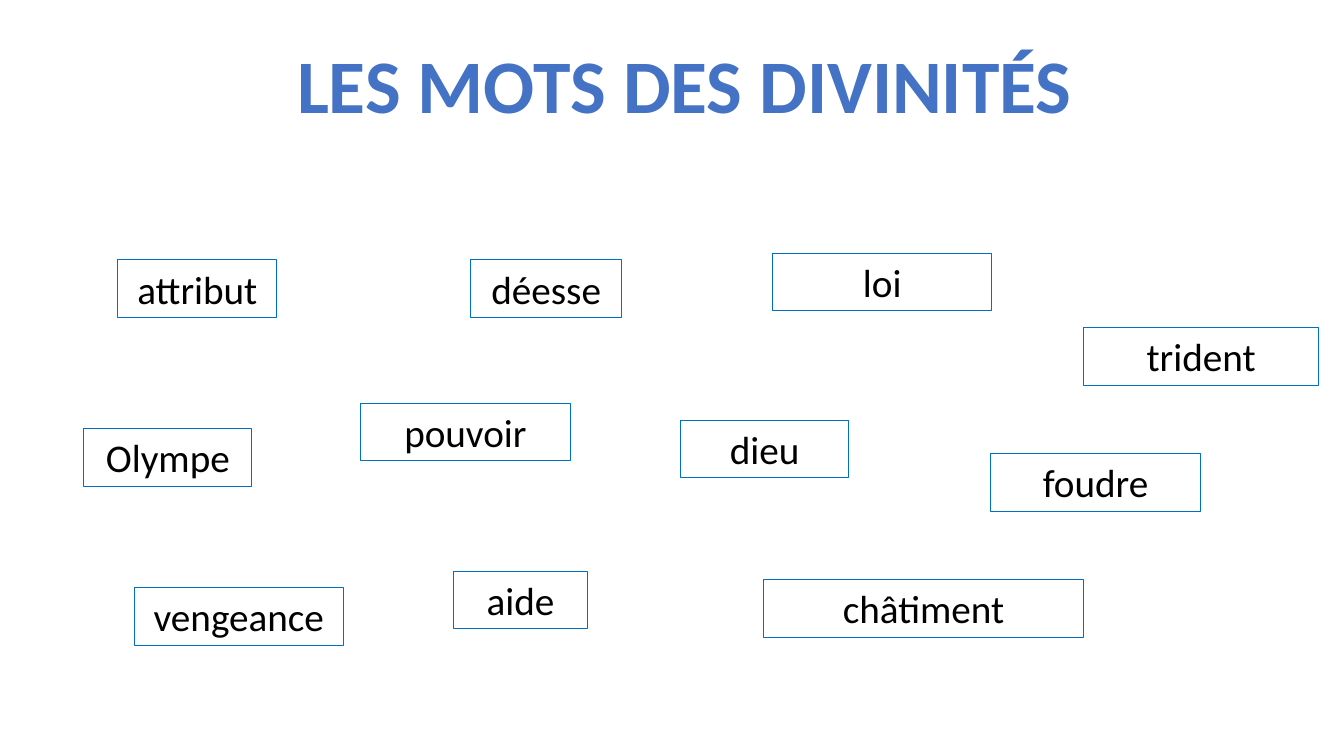
import pptx
import pptx.dml.color
import pptx.enum.shapes
import pptx.enum.text
import pptx.util
from pptx.util import Cm

TITLE = "LES MOTS DES DIVINITÉS"
TITLE_BOX = (3.18, 0.84, 28.14, 2.57)

# Word, left, top and width in centimetres
WORDS = [
    ("attribut", 2.97, 6.55, 4.01),
    ("déesse", 11.86, 6.55, 3.81),
    ("loi", 19.48, 6.38, 5.51),
    ("trident", 27.31, 8.26, 5.92),
    ("Olympe", 2.11, 10.8, 4.24),
    ("pouvoir", 9.09, 10.16, 5.28),
    ("dieu", 17.15, 10.59, 4.24),
    ("foudre", 24.97, 11.43, 5.28),
    ("vengeance", 3.38, 14.81, 5.28),
    ("aide", 11.43, 14.4, 3.38),
    ("châtiment", 19.25, 14.61, 8.05),
]
WORD_HEIGHT = 1.45


def color(value):
    return pptx.dml.color.RGBColor.from_string(value)


def write(shape, text, size, text_color, bold=False):
    frame = shape.text_frame
    frame.word_wrap = True
    frame.auto_size = pptx.enum.text.MSO_AUTO_SIZE.SHAPE_TO_FIT_TEXT
    frame.vertical_anchor = pptx.enum.text.MSO_ANCHOR.TOP
    paragraph = frame.paragraphs[0]
    paragraph.text = text
    paragraph.alignment = pptx.enum.text.PP_ALIGN.CENTER
    paragraph.font.name = "Calibri"
    paragraph.font.size = pptx.util.Pt(size)
    paragraph.font.bold = bold
    paragraph.font.color.rgb = color(text_color)


def add_word(slide, word, left, top, width):
    shape = slide.shapes.add_shape(
        pptx.enum.shapes.MSO_SHAPE.RECTANGLE,
        Cm(left), Cm(top), Cm(width), Cm(WORD_HEIGHT))
    shape.shadow.inherit = False
    shape.fill.background()
    shape.line.color.rgb = color("0070C0")
    shape.line.width = pptx.util.Pt(0.75)
    write(shape, word, 28, "000000")


def main():
    presentation = pptx.Presentation()
    presentation.slide_width = Cm(33.87)
    presentation.slide_height = Cm(19.05)
    slide = presentation.slides.add_slide(presentation.slide_layouts[6])
    title = slide.shapes.add_textbox(*map(Cm, TITLE_BOX))
    write(title, TITLE, 54, "4472C4", bold=True)
    for word in WORDS:
        add_word(slide, *word)
    presentation.save("out.pptx")


if __name__ == "__main__":
    main()
